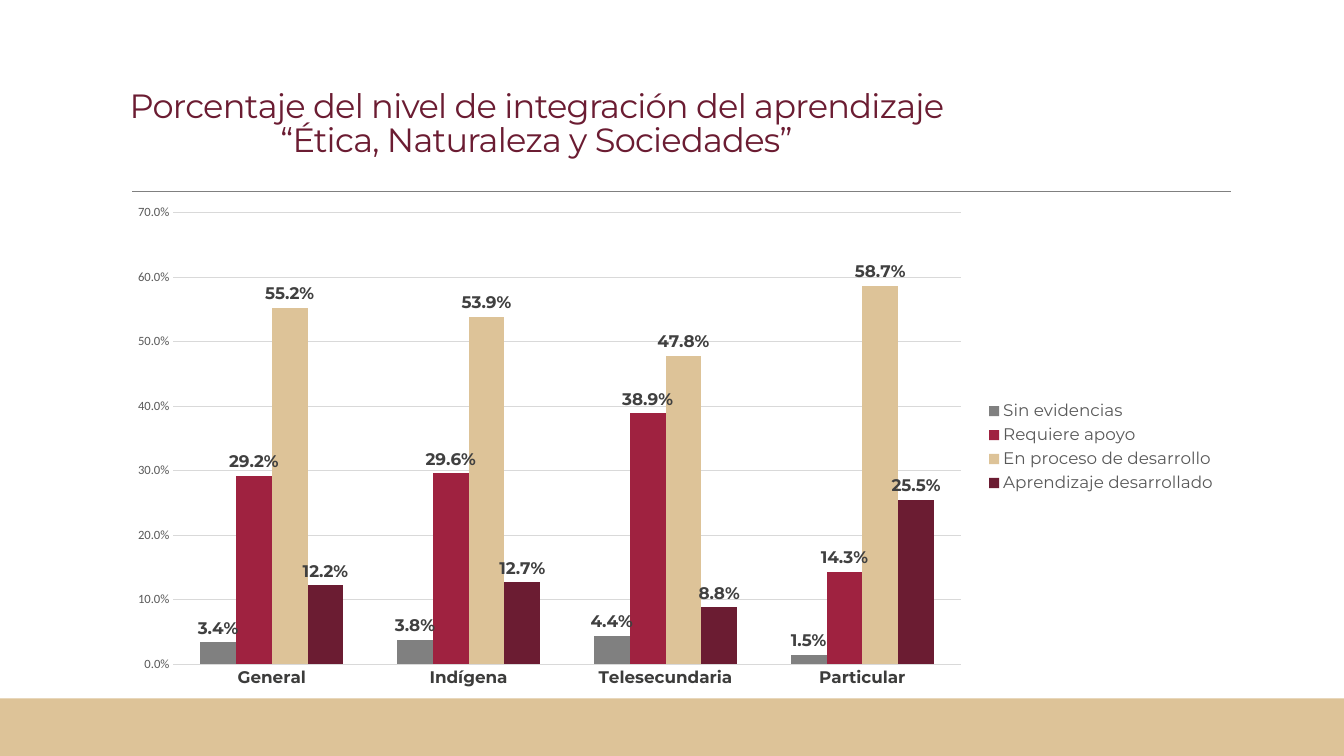
from dataclasses import dataclass

import lxml.etree
import pptx
import pptx.chart.data
import pptx.dml.color
import pptx.enum.chart
import pptx.enum.shapes
import pptx.enum.text
import pptx.oxml
import pptx.oxml.ns
import pptx.util

Inches = pptx.util.Inches
COLORS = {
    "gray": "808080", "red": "9F2240", "sand": "DDC398", "wine": "6B1C32",
    "label": "404040", "category": "3C3C3B", "muted": "595959", "grid": "D9D9D9",
}
HEADING_FONT = "Montserrat"
PERCENT = "0.0%"
LEVELS = ["General", "Indígena", "Telesecundaria", "Particular"]


@dataclass(frozen=True)
class Series:
    name: str
    color: str
    values: tuple[float, ...]


@dataclass(frozen=True)
class Box:
    left: float
    top: float
    width: float
    height: float

    def lengths(self) -> tuple:
        return tuple(Inches(n) for n in (self.left, self.top, self.width, self.height))


SERIES = [
    Series("Sin evidencias", "gray", (0.034, 0.038, 0.044, 0.015)),
    Series("Requiere apoyo", "red", (0.292, 0.296, 0.389, 0.143)),
    Series("En proceso de desarrollo", "sand", (0.552, 0.539, 0.478, 0.587)),
    Series("Aprendizaje desarrollado", "wine", (0.122, 0.127, 0.088, 0.255)),
]
TITLE_BOX = Box(1.03, 0.57, 8.58, 1.06)
CHART_BOX = Box(1.15, 1.94, 11.02, 4.99)
PLOT_BOX = Box(1.72, 2.11, 7.81, 4.48)
FOOTER_BOX = Box(0, 6.93, 13.33, 0.57)


def rgb(name: str) -> pptx.dml.color.RGBColor:
    return pptx.dml.color.RGBColor.from_string(COLORS[name])


def style_font(font, size: float, color: str, bold: bool = False, name: str = HEADING_FONT) -> None:
    font.name = name
    font.size = pptx.util.Pt(size)
    font.bold = bold
    font.color.rgb = rgb(color)


def add_footer(slide) -> None:
    band = slide.shapes.add_shape(pptx.enum.shapes.MSO_SHAPE.RECTANGLE, *FOOTER_BOX.lengths())
    band.shadow.inherit = False
    band.fill.solid()
    band.fill.fore_color.rgb = rgb("sand")
    band.line.fill.background()


def add_divider(slide) -> None:
    divider = slide.shapes.add_connector(
        pptx.enum.shapes.MSO_CONNECTOR.STRAIGHT,
        Inches(1.31), Inches(1.9), Inches(12.21), Inches(1.9))
    divider.line.color.rgb = rgb("gray")
    divider.line.width = pptx.util.Pt(0.5)
    lxml.etree.SubElement(divider._element.spPr, pptx.oxml.ns.qn("a:effectLst"))


def add_title(slide) -> None:
    text_frame = slide.shapes.add_textbox(*TITLE_BOX.lengths()).text_frame
    text_frame.word_wrap = True
    text_frame.vertical_anchor = pptx.enum.text.MSO_ANCHOR.BOTTOM
    text_frame.text = ("Porcentaje del nivel de integración del aprendizaje "
                       "“Ética, Naturaleza y Sociedades”")
    paragraph = text_frame.paragraphs[0]
    paragraph.alignment = pptx.enum.text.PP_ALIGN.CENTER
    paragraph.line_spacing = 0.85
    run = paragraph.runs[0]
    style_font(run.font, 24, "wine")
    run._r.get_or_add_rPr().set("spc", "-50")


def place_plot(chart) -> None:
    """Fix the inner plot area at PLOT_BOX, as fractions of the chart."""
    plot_area = chart._chartSpace.chart.plotArea
    for layout in plot_area.findall(pptx.oxml.ns.qn("c:layout")):
        plot_area.remove(layout)
    fractions = {
        "x": (PLOT_BOX.left - CHART_BOX.left) / CHART_BOX.width,
        "y": (PLOT_BOX.top - CHART_BOX.top) / CHART_BOX.height,
        "w": PLOT_BOX.width / CHART_BOX.width,
        "h": PLOT_BOX.height / CHART_BOX.height,
    }
    settings = {"layoutTarget": "inner", "xMode": "edge", "yMode": "edge"}
    settings.update({key: f"{value:.4f}" for key, value in fractions.items()})
    children = "".join(f'<c:{key} val="{value}"/>' for key, value in settings.items())
    plot_area.insert(0, pptx.oxml.parse_xml(
        f'<c:layout {pptx.oxml.ns.nsdecls("c")}><c:manualLayout>{children}</c:manualLayout></c:layout>'))


def style_axes(chart) -> None:
    for axis in (chart.category_axis, chart.value_axis):
        axis.major_tick_mark = pptx.enum.chart.XL_TICK_MARK.NONE
        axis.minor_tick_mark = pptx.enum.chart.XL_TICK_MARK.NONE
        axis.format.line.fill.background()
    style_font(chart.category_axis.tick_labels.font, 12, "category", bold=True)
    value_axis = chart.value_axis
    value_axis.minimum_scale, value_axis.maximum_scale, value_axis.major_unit = 0, 0.7, 0.1
    style_font(value_axis.tick_labels.font, 9, "muted", name="Calibri")
    value_axis.tick_labels.number_format = PERCENT
    value_axis.tick_labels.number_format_is_linked = False
    value_axis.has_major_gridlines = True
    grid_line = value_axis.major_gridlines.format.line
    grid_line.color.rgb = rgb("grid")
    grid_line.width = pptx.util.Pt(0.75)


def style_series(plot) -> None:
    plot.gap_width = 150
    plot.overlap = 0
    plot.vary_by_categories = False
    for series, spec_row in zip(plot.series, SERIES):
        series.format.fill.solid()
        series.format.fill.fore_color.rgb = rgb(spec_row.color)
        series.invert_if_negative = False
        labels = series.data_labels
        labels.show_value = True
        labels.number_format = PERCENT
        labels.number_format_is_linked = False
        labels.position = pptx.enum.chart.XL_LABEL_POSITION.OUTSIDE_END
        style_font(labels.font, 12, "label", bold=True)


def add_level_chart(slide) -> None:
    data = pptx.chart.data.CategoryChartData(number_format=PERCENT)
    data.categories = LEVELS
    for series in SERIES:
        data.add_series(series.name, series.values)
    chart = slide.shapes.add_chart(
        pptx.enum.chart.XL_CHART_TYPE.COLUMN_CLUSTERED, *CHART_BOX.lengths(), data).chart
    chart.has_title = False
    chart.font.name = "Calibri"
    chart.font.size = pptx.util.Pt(10)
    chart.has_legend = True
    chart.legend.position = pptx.enum.chart.XL_LEGEND_POSITION.RIGHT
    chart.legend.include_in_layout = False
    style_font(chart.legend.font, 12, "muted")
    style_axes(chart)
    style_series(chart.plots[0])
    place_plot(chart)


def main() -> None:
    presentation = pptx.Presentation()
    presentation.slide_width = Inches(13.33)
    presentation.slide_height = Inches(7.5)
    slide = presentation.slides.add_slide(presentation.slide_layouts[6])
    add_divider(slide)
    add_footer(slide)
    add_title(slide)
    add_level_chart(slide)
    presentation.save("out.pptx")


if __name__ == "__main__":
    main()
